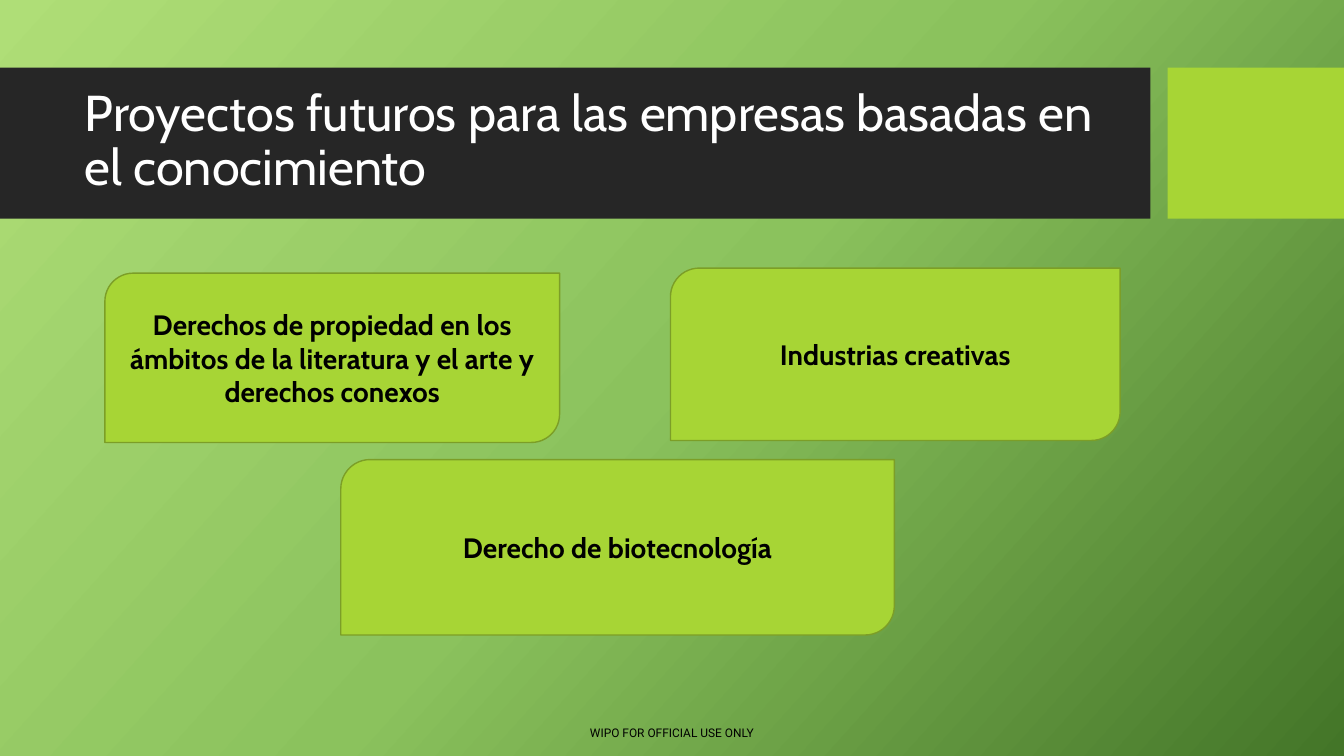
from copy import deepcopy

from pptx import Presentation
from pptx.dml.color import RGBColor
from pptx.enum.shapes import MSO_SHAPE
from pptx.enum.text import MSO_ANCHOR, MSO_AUTO_SIZE, PP_ALIGN
from pptx.oxml.ns import qn
from pptx.util import Inches, Pt

RECTANGLE = MSO_SHAPE.RECTANGLE
ROUNDED_DIAGONAL = MSO_SHAPE.ROUND_2_DIAG_RECTANGLE
MIDDLE, TOP = MSO_ANCHOR.MIDDLE, MSO_ANCHOR.TOP
LEFT, CENTER = PP_ALIGN.LEFT, PP_ALIGN.CENTER
NO_AUTOFIT = MSO_AUTO_SIZE.NONE

WHITE = RGBColor(0xFF, 0xFF, 0xFF)
BLACK = RGBColor(0x00, 0x00, 0x00)
CHARCOAL = RGBColor(0x26, 0x26, 0x26)
LIME = RGBColor(0xA7, 0xD5, 0x35)
OLIVE = RGBColor(0x7C, 0x9E, 0x27)
BACKGROUND_STOPS = [
    (0, RGBColor(0xAF, 0xDE, 0x77)),
    (0.5, RGBColor(0x8B, 0xC2, 0x5D)),
    (1, RGBColor(0x43, 0x75, 0x28)),
]

TOPICS = [
    ("Derechos de propiedad en los ámbitos de la literatura y el arte y "
     "derechos conexos", (1.04, 2.71, 4.51, 1.68)),
    ("Industrias creativas", (6.65, 2.66, 4.46, 1.71)),
    ("Derecho de biotecnología", (3.38, 4.56, 5.49, 1.74)),
]


def inches(box):
    return [Inches(length) for length in box]


def write(shape, text, size, color=BLACK, font="Cabin", bold=False,
          align=CENTER, anchor=MIDDLE, line_spacing=None):
    frame = shape.text_frame
    frame.word_wrap = True
    frame.auto_size = NO_AUTOFIT
    frame.vertical_anchor = anchor
    paragraph = frame.paragraphs[0]
    paragraph.alignment = align
    paragraph.line_spacing = line_spacing
    run = paragraph.add_run()
    run.text = text
    run.font.name = font
    run.font.size = Pt(size)
    run.font.bold = bold
    run.font.color.rgb = color


def paint_background(slide):
    fill = slide.background.fill
    fill.gradient()
    fill.gradient_angle = 360 - 42
    stop_list = slide.element.find(".//" + qn("a:gsLst"))
    stop_list.append(deepcopy(stop_list[0]))
    for stop, (position, color) in zip(fill.gradient_stops, BACKGROUND_STOPS):
        stop.position = position
        stop.color.rgb = color


def add_panel(slide, preset, box, fill, outline=None):
    panel = slide.shapes.add_shape(preset, *inches(box))
    panel.shadow.inherit = False
    panel.fill.solid()
    panel.fill.fore_color.rgb = fill
    if outline is None:
        panel.line.fill.background()
    else:
        panel.line.color.rgb = outline
        panel.line.width = Pt(1)
    return panel


def add_title(slide, text, box):
    """Fill the title placeholder and bring it in front of the bands."""
    title = slide.shapes.title
    title.left, title.top, title.width, title.height = inches(box)
    write(title, text, 36, WHITE, align=LEFT, line_spacing=0.9)
    slide.shapes.element.append(title.element)


def add_footer(slide, text, box):
    footer = slide.shapes.add_textbox(*inches(box))
    write(footer, text, 8.5, font="Roboto", anchor=TOP)


def main():
    deck = Presentation()
    deck.slide_width, deck.slide_height = Inches(13.33), Inches(7.5)
    slide = deck.slides.add_slide(deck.slide_layouts.get_by_name("Title Only"))
    paint_background(slide)
    add_footer(slide, "WIPO FOR OFFICIAL USE ONLY", (0, 7.15, 13.33, 0.24))
    add_panel(slide, RECTANGLE, (0, 0.67, 11.41, 1.5), CHARCOAL)
    add_panel(slide, RECTANGLE, (11.58, 0.67, 1.75, 1.5), LIME)
    add_title(slide, "Proyectos futuros para las empresas basadas en el conocimiento",
              (0.74, 0.82, 10.51, 1.18))
    for topic, box in TOPICS:
        card = add_panel(slide, ROUNDED_DIAGONAL, box, LIME, OLIVE)
        write(card, topic, 20, bold=True)
    deck.save("out.pptx")


if __name__ == "__main__":
    main()
